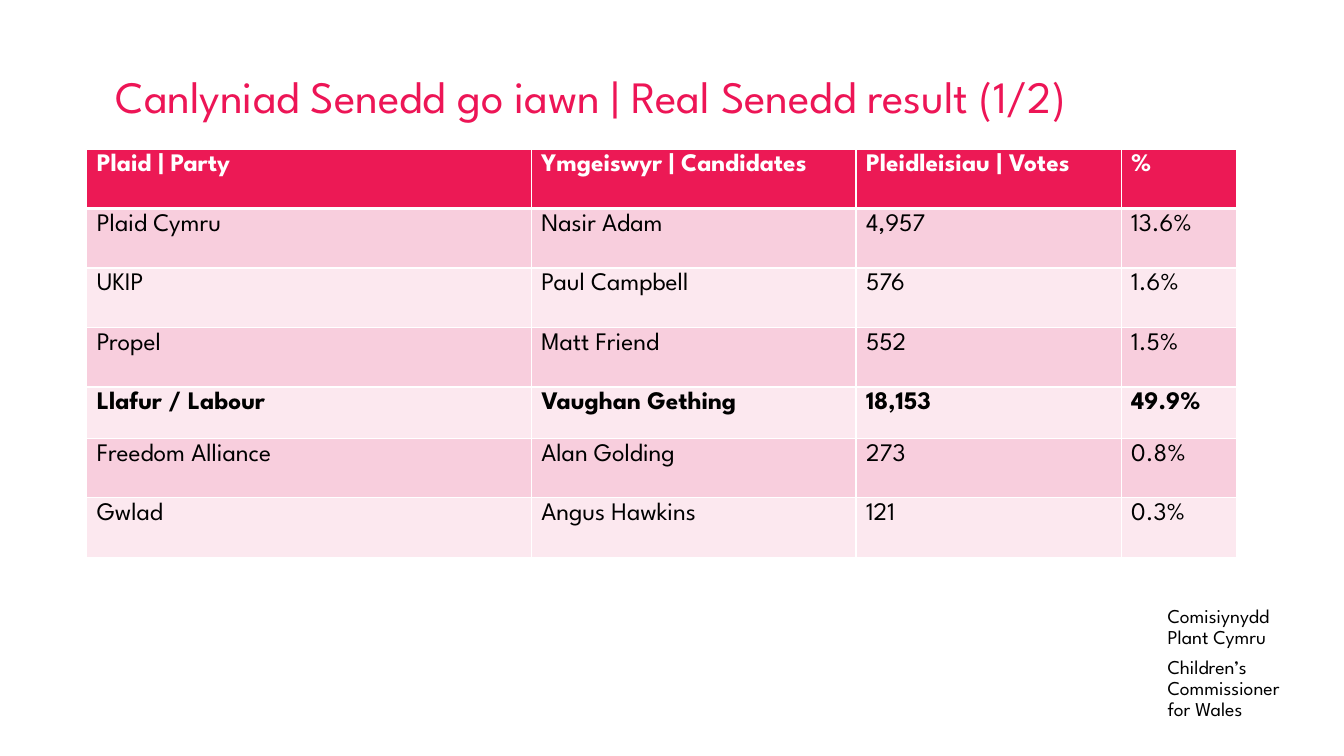
from lxml import etree
from pptx import Presentation
from pptx.dml.color import RGBColor
from pptx.enum.text import MSO_ANCHOR, MSO_AUTO_SIZE, PP_ALIGN
from pptx.oxml.ns import qn
from pptx.util import Inches, Pt

TOP, MIDDLE = MSO_ANCHOR.TOP, MSO_ANCHOR.MIDDLE
GROW = MSO_AUTO_SIZE.SHAPE_TO_FIT_TEXT
LEFT = PP_ALIGN.LEFT
TITLE_ONLY = 5

FONT = "League Spartan"
COLORS = {
    "title": "ED1556",
    "header": "EC1955",
    "band_dark": "F8CEDD",
    "band_light": "FCE8EF",
    "white": "FFFFFF",
    "black": "000000",
}

HEADINGS = ("Plaid | Party", "Ymgeiswyr | Candidates", "Pleidleisiau | Votes", "%")
RESULTS = (
    ("Plaid Cymru", "Nasir Adam", "4,957", "13.6%"),
    ("UKIP", "Paul Campbell", "576", "1.6%"),
    ("Propel", "Matt Friend", "552", "1.5%"),
    ("Llafur / Labour", "Vaughan Gething", "18,153", "49.9%"),
    ("Freedom Alliance", "Alan Golding", "273", "0.8%"),
    ("Gwlad", "Angus Hawkins", "121", "0.3%"),
)
WINNER_ROW = 4
COLUMN_WIDTHS = (4.41, 3.22, 2.63, 1.15)
ROW_HEIGHT, WINNER_HEIGHT = 0.59, 0.51
COMMISSIONER = (
    ("Comisiynydd", "Plant Cymru"),
    ("Children’s", "Commissioner", "for Wales"),
)


def rgb(name):
    return RGBColor.from_string(COLORS[name])


def add_text(paragraph, text, size, color, bold=False):
    run = paragraph.add_run()
    run.text = text
    run.font.name = FONT
    run.font.size = Pt(size)
    run.font.bold = bold
    run.font.color.rgb = rgb(color)


def prepare_frame(frame, anchor):
    frame.margin_left = frame.margin_top = 0
    frame.margin_right = frame.margin_bottom = 0
    frame.word_wrap = True
    frame.auto_size = GROW
    frame.vertical_anchor = anchor


def add_borders(cell, bottom, top):
    properties = cell._tc.get_or_add_tcPr()
    for side, width in (("lnL", 1), ("lnR", 1), ("lnT", top), ("lnB", bottom)):
        line = etree.SubElement(properties, qn(f"a:{side}"), w=str(Pt(width)))
        fill = etree.SubElement(line, qn("a:solidFill"))
        etree.SubElement(fill, qn("a:srgbClr"), val=COLORS["white"])


def add_commissioner(slide, left, top, width, height):
    signature = slide.shapes.add_textbox(
        Inches(left), Inches(top), Inches(width), Inches(height))
    frame = signature.text_frame
    prepare_frame(frame, MIDDLE)
    for index, lines in enumerate(COMMISSIONER):
        paragraph = frame.add_paragraph() if index else frame.paragraphs[0]
        paragraph.line_spacing = 0.9
        paragraph.space_after = Pt(0 if index else 6)
        for number, line in enumerate(lines):
            if number:
                paragraph.add_line_break()
            add_text(paragraph, line, 14, "black")


def add_heading(slide, left, top, width, height):
    heading = slide.shapes.title
    heading.left, heading.top = Inches(left), Inches(top)
    heading.width, heading.height = Inches(width), Inches(height)
    prepare_frame(heading.text_frame, TOP)
    paragraph = heading.text_frame.paragraphs[0]
    paragraph.alignment = LEFT
    paragraph.line_spacing = 0.9
    add_text(paragraph, "Canlyniad Senedd go iawn | Real Senedd result (1/2)",
             32, "title")


def add_results(slide, left, top, width, height):
    rows = (HEADINGS, *RESULTS)
    results = slide.shapes.add_table(
        len(rows), len(HEADINGS),
        Inches(left), Inches(top), Inches(width), Inches(height)).table
    for column, column_width in zip(results.columns, COLUMN_WIDTHS):
        column.width = Inches(column_width)
    for index, values in enumerate(rows):
        is_header, is_winner = index == 0, index == WINNER_ROW
        results.rows[index].height = Inches(
            WINNER_HEIGHT if is_winner else ROW_HEIGHT)
        band = "band_dark" if index % 2 else "band_light"
        for column, value in enumerate(values):
            cell = results.cell(index, column)
            add_borders(cell, 3 if is_header else 1, 3 if index == 1 else 1)
            cell.fill.solid()
            cell.fill.fore_color.rgb = rgb("header" if is_header else band)
            add_text(cell.text_frame.paragraphs[0], value, 18,
                     "white" if is_header else "black", is_header or is_winner)


def main():
    deck = Presentation()
    deck.slide_width, deck.slide_height = Inches(13.33), Inches(7.5)
    slide = deck.slides.add_slide(deck.slide_layouts[TITLE_ONLY])
    slide.background.fill.solid()
    slide.background.fill.fore_color.rgb = rgb("white")
    add_commissioner(slide, 11.58, 6.01, 1.38, 1.15)
    add_heading(slide, 1.15, 0.74, 11.84, 0.48)
    add_results(slide, 0.86, 1.48, 11.41, 4.05)
    deck.save("out.pptx")


if __name__ == "__main__":
    main()
